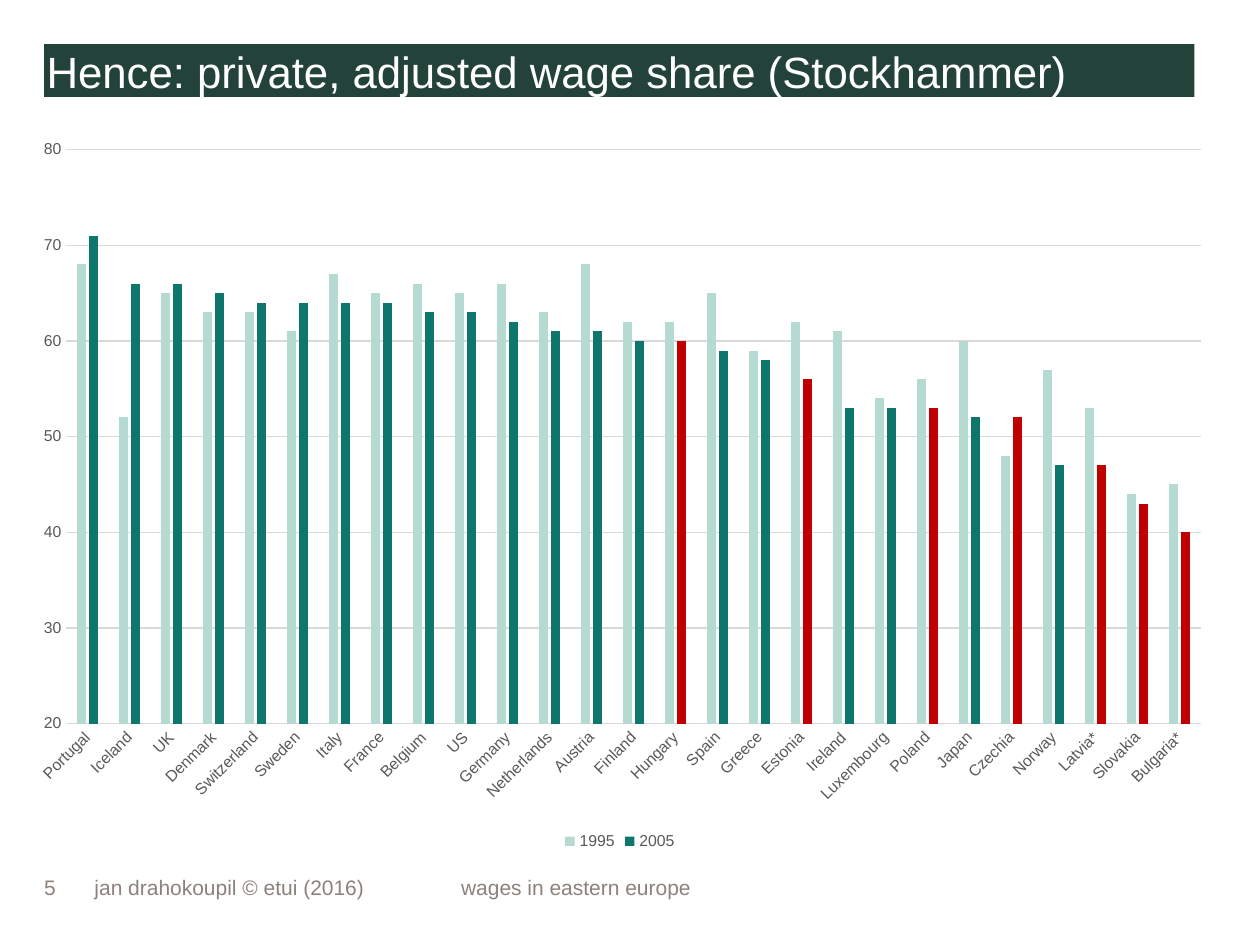
from pptx import Presentation
from pptx.chart.data import CategoryChartData
from pptx.dml.color import RGBColor
from pptx.enum.chart import XL_CHART_TYPE, XL_LEGEND_POSITION, XL_TICK_MARK
from pptx.enum.shapes import MSO_SHAPE
from pptx.enum.text import MSO_ANCHOR, PP_ALIGN
from pptx.oxml.ns import qn
from pptx.util import Inches, Pt

FONT = "Arial"
COLORS = {
    "title": "23423A", "white": "FFFFFF", "footer": "8D817B",
    "label": "595959", "grid": "D9D9D9",
    "1995": "B5DAD2", "2005": "0D776E", "east": "C00000",
}
# Country, wage share in 1995, wage share in 2005
SHARES = [
    ("Portugal", 68, 71), ("Iceland", 52, 66), ("UK", 65, 66),
    ("Denmark", 63, 65), ("Switzerland", 63, 64), ("Sweden", 61, 64),
    ("Italy", 67, 64), ("France", 65, 64), ("Belgium", 66, 63),
    ("US", 65, 63), ("Germany", 66, 62), ("Netherlands", 63, 61),
    ("Austria", 68, 61), ("Finland", 62, 60), ("Hungary", 62, 60),
    ("Spain", 65, 59), ("Greece", 59, 58), ("Estonia", 62, 56),
    ("Ireland", 61, 53), ("Luxembourg", 54, 53), ("Poland", 56, 53),
    ("Japan", 60, 52), ("Czechia", 48, 52), ("Norway", 57, 47),
    ("Latvia*", 53, 47), ("Slovakia", 44, 43), ("Bulgaria*", 45, 40),
]
EAST = {"Hungary", "Estonia", "Poland", "Czechia", "Latvia*", "Slovakia",
        "Bulgaria*"}
FOOTER = [
    (0.35, 0.39, "5"),
    (0.75, 2.84, "jan drahokoupil © etui (2016)"),
    (3.66, 4.96, "wages in eastern europe"),
]


def rgb(name):
    return RGBColor.from_string(COLORS[name])


def paint(fill, name):
    fill.solid()
    fill.fore_color.rgb = rgb(name)


def style(font, size, color):
    font.name = FONT
    font.size = Pt(size)
    font.color.rgb = rgb(color)


def write(shape, text, size, color, anchor, side=0):
    """Put one left-aligned run in a shape, with the given side margins."""
    frame = shape.text_frame
    frame.word_wrap = True
    frame.vertical_anchor = anchor
    frame.margin_left = frame.margin_right = Inches(side)
    frame.margin_top = frame.margin_bottom = 0
    par = frame.paragraphs[0]
    par.alignment = PP_ALIGN.LEFT
    run = par.add_run()
    run.text = text
    style(run.font, size, color)


def add_title(slide, text):
    bar = slide.shapes.add_shape(MSO_SHAPE.RECTANGLE, Inches(0.35),
                                 Inches(0.35), Inches(9.13), Inches(0.42))
    bar.shadow.inherit = False
    paint(bar.fill, "title")
    bar.line.fill.background()
    write(bar, text, 25, "white", MSO_ANCHOR.MIDDLE, 0.02)


def add_footer(slide, left, width, text):
    box = slide.shapes.add_textbox(Inches(left), Inches(6.79),
                                   Inches(width), Inches(0.35))
    write(box, text, 12, "footer", MSO_ANCHOR.BOTTOM)


def style_axis(axis):
    axis.major_tick_mark = axis.minor_tick_mark = XL_TICK_MARK.NONE
    style(axis.tick_labels.font, 9, "label")


def slant(axis):
    """Let the labels of an axis turn by themselves when space is short."""
    body = next(axis._element.iter(qn("a:bodyPr")))
    body.set("rot", "-60000000")
    body.set("vert", "horz")


def style_line(line):
    line.color.rgb = rgb("grid")
    line.width = Pt(0.75)


def add_chart(slide):
    names, old, new = zip(*SHARES)
    data = CategoryChartData()
    data.categories = names
    data.add_series("1995", old)
    data.add_series("2005", new)
    chart = slide.shapes.add_chart(
        XL_CHART_TYPE.COLUMN_CLUSTERED, Inches(0.12), Inches(1),
        Inches(9.6), Inches(5.79), data).chart
    style(chart.font, 10, "label")
    chart.has_title = False

    chart.has_legend = True
    chart.legend.position = XL_LEGEND_POSITION.BOTTOM
    chart.legend.include_in_layout = False
    style(chart.legend.font, 9, "label")

    style_axis(chart.category_axis)
    slant(chart.category_axis)
    style_line(chart.category_axis.format.line)
    scale = chart.value_axis
    style_axis(scale)
    scale.minimum_scale, scale.maximum_scale = 20, 80
    scale.major_unit = 10
    scale.format.line.fill.background()
    style_line(scale.major_gridlines.format.line)

    plot = chart.plots[0]
    plot.vary_by_categories = False
    plot.gap_width, plot.overlap = 219, -27
    for series in plot.series:
        series.invert_if_negative = False
        paint(series.format.fill, series.name)
    for i, name in enumerate(names):
        if name in EAST:
            paint(plot.series[1].points[i].format.fill, "east")


def main():
    deck = Presentation()
    deck.slide_width, deck.slide_height = Inches(10), Inches(7.5)
    slide = deck.slides.add_slide(deck.slide_layouts[6])
    add_title(slide, "Hence: private, adjusted wage share (Stockhammer)")
    for left, width, text in FOOTER:
        add_footer(slide, left, width, text)
    add_chart(slide)
    deck.save("out.pptx")


if __name__ == "__main__":
    main()
